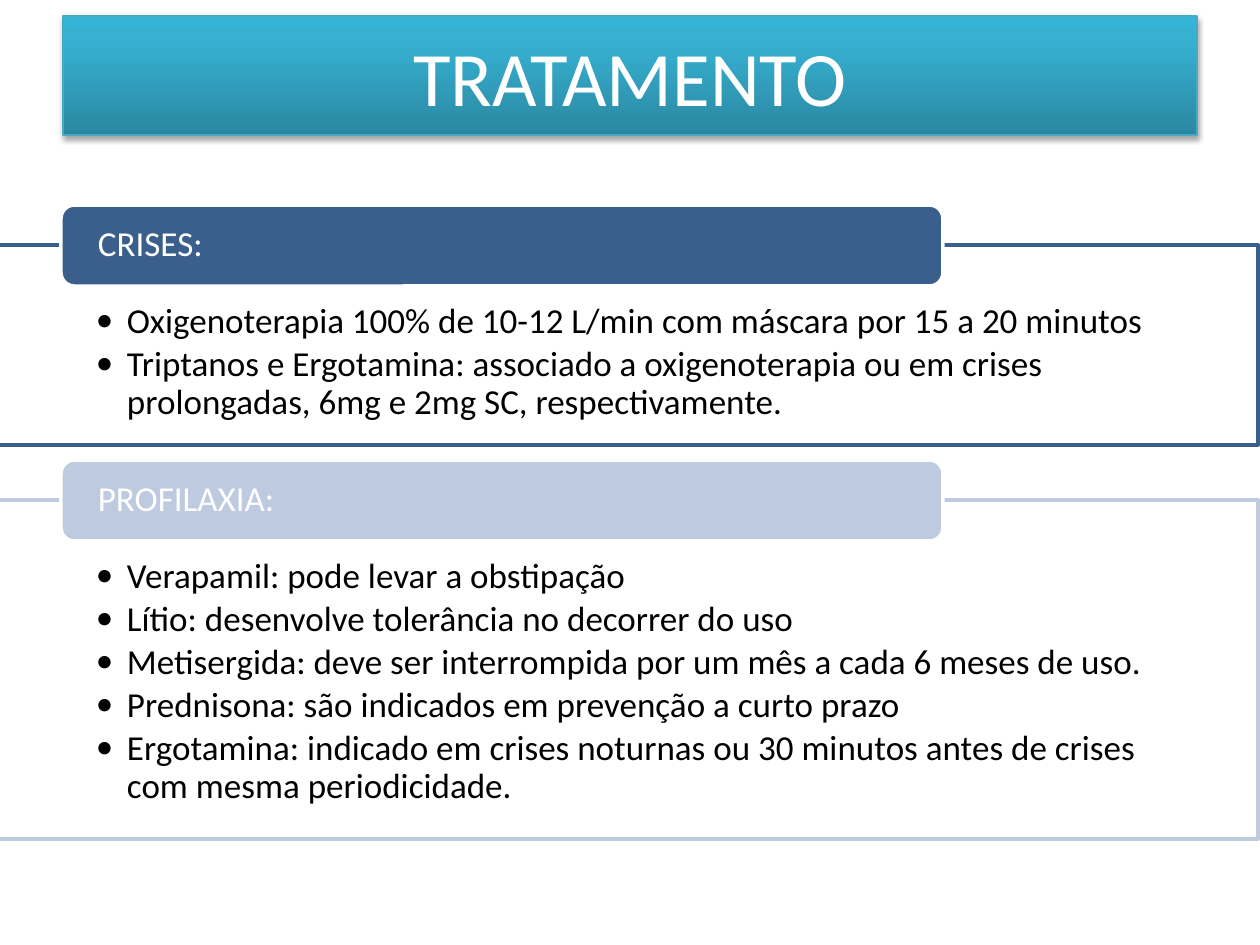
import copy

import lxml.etree
import pptx
import pptx.dml.color
import pptx.enum.shapes
import pptx.enum.text
import pptx.oxml
import pptx.oxml.ns
import pptx.util

PX = 914400 / 126
FONT = "Calibri"
WHITE = pptx.dml.color.RGBColor(0xFF, 0xFF, 0xFF)
BLACK = pptx.dml.color.RGBColor(0x00, 0x00, 0x00)
NAVY = pptx.dml.color.RGBColor(0x3A, 0x5F, 0x8C)
PALE_BLUE = pptx.dml.color.RGBColor(0xBE, 0xCA, 0xDF)
TEAL_LINE = pptx.dml.color.RGBColor(0x46, 0xAA, 0xC5)
TITLE_STOPS = (
    (0, pptx.dml.color.RGBColor(0x2A, 0x88, 0xA2)),
    (0.8, pptx.dml.color.RGBColor(0x37, 0xB1, 0xD2)),
    (1, pptx.dml.color.RGBColor(0x34, 0xB4, 0xD6)),
)
TITLE_SHADOW = (
    f'<a:effectLst {pptx.oxml.ns.nsdecls("a")}>'
    '<a:outerShdw blurRad="40000" dist="23000" dir="5400000" rotWithShape="0">'
    '<a:srgbClr val="000000"><a:alpha val="35000"/></a:srgbClr>'
    "</a:outerShdw></a:effectLst>"
)
SECTIONS = (
    ("CRISES:", NAVY, (-2, 245, 1260, 200), (
        "Oxigenoterapia 100% de 10-12 L/min com máscara por 15 a 20 minutos",
        "Triptanos e Ergotamina: associado a oxigenoterapia ou em crises "
        "prolongadas, 6mg e 2mg SC, respectivamente.",
    )),
    ("PROFILAXIA:", PALE_BLUE, (-2, 500, 1260, 339), (
        "Verapamil: pode levar a obstipação",
        "Lítio: desenvolve tolerância no decorrer do uso",
        "Metisergida: deve ser interrompida por um mês a cada 6 meses de uso.",
        "Prednisona: são indicados em prevenção a curto prazo",
        "Ergotamina: indicado em crises noturnas ou 30 minutos antes de crises "
        "com mesma periodicidade.",
    )),
)


def emu(pixels):
    """Turn a length in px into EMU."""
    return pptx.util.Emu(round(pixels * PX))


def set_attributes(target, values):
    """Set each attribute of the target from a dict."""
    for name, value in values.items():
        setattr(target, name, value)


def place(shape, box):
    """Move and size a shape to a box in px."""
    set_attributes(shape, dict(zip(("left", "top", "width", "height"), map(emu, box))))


def set_line(shape, color, width):
    """Give a shape a solid outline."""
    shape.line.color.rgb = color
    shape.line.width = pptx.util.Pt(width)


def format_paragraph(paragraph, text, size, color, values):
    """Write one paragraph and format it."""
    paragraph.text = text
    set_attributes(paragraph, values)
    set_attributes(paragraph.runs[0].font, {"name": FONT, "size": pptx.util.Pt(size)})
    paragraph.runs[0].font.color.rgb = color


def add_bullet(paragraph):
    """Give a paragraph a round bullet and a hanging indent."""
    properties = paragraph._p.get_or_add_pPr()
    properties.set("marL", str(emu(31)))
    properties.set("indent", str(emu(-31)))
    for tag, name, value in (("a:buFont", "typeface", FONT), ("a:buChar", "char", "•")):
        lxml.etree.SubElement(properties, pptx.oxml.ns.qn(tag)).set(name, value)


def add_box(slide, kind, box, fill, line):
    """Add a filled and outlined preset shape without shadow."""
    shape = slide.shapes.add_shape(kind, 0, 0, 0, 0)
    place(shape, box)
    shape.shadow.inherit = False
    shape.fill.solid()
    shape.fill.fore_color.rgb = fill
    set_line(shape, line, 2)
    return shape


def format_title(slide, box, text):
    """Place the title as a gradient banner with a soft shadow."""
    title = slide.shapes.title
    place(title, box)
    title.fill.gradient()
    stop_list = title._element.spPr.find(".//" + pptx.oxml.ns.qn("a:gsLst"))
    stop_list.append(copy.deepcopy(stop_list[-1]))
    for stop, (position, color) in zip(title.fill.gradient_stops, TITLE_STOPS):
        stop.position = position
        stop.color.rgb = color
    title.fill.gradient_angle = 90
    set_line(title, TEAL_LINE, 0.75)
    title._element.spPr.append(pptx.oxml.parse_xml(TITLE_SHADOW))
    title.text_frame.vertical_anchor = pptx.enum.text.MSO_ANCHOR.MIDDLE
    format_paragraph(title.text_frame.paragraphs[0], text, 44, WHITE,
                     {"alignment": pptx.enum.text.PP_ALIGN.CENTER})


def add_section(slide, box, label, color, items):
    """Add an outlined list with a rounded label over its top edge."""
    left, top, width, height = box
    shapes = pptx.enum.shapes.MSO_SHAPE
    values = {"alignment": pptx.enum.text.PP_ALIGN.LEFT, "line_spacing": 0.9}

    panel = add_box(slide, shapes.RECTANGLE, box, WHITE, color)
    fill_color = panel._element.spPr.find(
        pptx.oxml.ns.qn("a:solidFill") + "/" + pptx.oxml.ns.qn("a:srgbClr"))
    lxml.etree.SubElement(fill_color, pptx.oxml.ns.qn("a:alpha")).set("val", "90000")
    frame = panel.text_frame
    set_attributes(frame, {
        "word_wrap": True, "vertical_anchor": pptx.enum.text.MSO_ANCHOR.TOP,
        "margin_left": emu(98), "margin_right": emu(98),
        "margin_top": emu(58), "margin_bottom": emu(20),
    })
    for index, item in enumerate(items):
        paragraph = frame.add_paragraph() if index else frame.paragraphs[0]
        format_paragraph(paragraph, item, 20, BLACK,
                         {**values, "space_after": pptx.util.Pt(3)})
        add_bullet(paragraph)

    tab = add_box(slide, shapes.ROUNDED_RECTANGLE,
                  (left + 63, top - 40, 882, 81), color, WHITE)
    set_attributes(tab.text_frame, {
        "word_wrap": True, "vertical_anchor": pptx.enum.text.MSO_ANCHOR.MIDDLE,
        "margin_left": emu(33), "margin_right": emu(33),
        "margin_top": 0, "margin_bottom": 0,
    })
    format_paragraph(tab.text_frame.paragraphs[0], label, 20, WHITE, values)


def main():
    """Build the treatment slide and save it."""
    presentation = pptx.Presentation()
    set_attributes(presentation, {"slide_width": emu(1260), "slide_height": emu(945)})
    slide = presentation.slides.add_slide(presentation.slide_layouts[5])
    format_title(slide, (63, 16, 1134, 119), "TRATAMENTO")
    for label, color, box, items in SECTIONS:
        add_section(slide, box, label, color, items)
    presentation.save("out.pptx")


if __name__ == "__main__":
    main()
